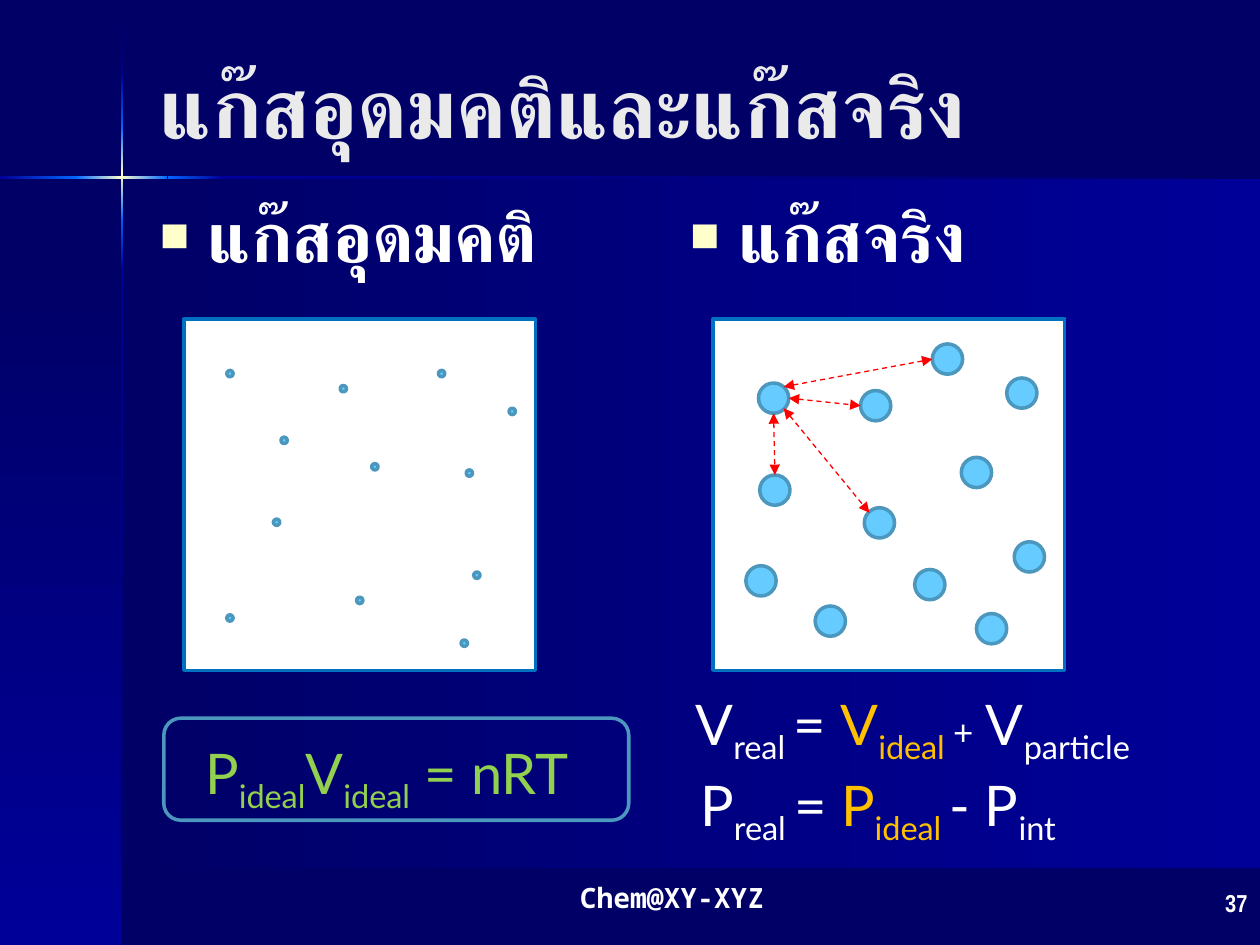
from lxml import etree
from pptx import Presentation
from pptx.dml.color import RGBColor
from pptx.enum.dml import MSO_LINE
from pptx.enum.shapes import MSO_CONNECTOR as LINK, MSO_SHAPE as SHAPE
from pptx.enum.text import MSO_ANCHOR as ANCHOR, MSO_AUTO_SIZE as FIT, PP_ALIGN as ALIGN
from pptx.oxml.ns import qn
from pptx.util import Inches, Pt

NIGHT, NAVY, BLUE, CREAM = "000066", "000099", "0066FF", "FFFFCC"
WHITE, GOLD, GREEN, RED = "FFFFFF", "FFC000", "92D050", "FF0000"
SKY, TEAL, FRAME, PALE = "66CCFF", "4B97BD", "0070C0", "EAEAEA"
DOWN, ACROSS = 90, 0


def rgb(code):
    return RGBColor.from_string(code)


def node(parent, tag, **attrs):
    return etree.SubElement(parent, qn(tag), **attrs)


class Board:
    """Holds the style and the current slide."""
    head, math = "Calibri", "Lato"

    def __init__(self, slide):
        self.slide = slide
        self.items = slide.shapes

    def shape(self, kind, x, y, w, h, fill=None, line=None):
        item = self.items.add_shape(kind, *map(Inches, (x, y, w, h)))
        item.shadow.inherit = False
        if fill:
            item.fill.solid()
            item.fill.fore_color.rgb = rgb(fill)
        else:
            item.fill.background()
        if line:
            item.line.color.rgb = rgb(line)
            item.line.width = Pt(2)
        else:
            item.line.fill.background()
        return item

    def band(self, x, y, w, h, angle, *codes):
        item = self.shape(SHAPE.RECTANGLE, x, y, w, h)
        item.fill.gradient()
        item.fill.gradient_angle = (360 - angle) % 360
        stops = item._element.spPr.find(".//" + qn("a:gsLst"))
        for old in list(stops):
            stops.remove(old)
        for i, code in enumerate(codes):
            stop = node(stops, "a:gs", pos=str(100000 * i // (len(codes) - 1)))
            node(stop, "a:srgbClr", val=code)

    def text(self, x, y, w, h, words, size, font, color=WHITE, bold=True,
             align=ALIGN.LEFT, anchor=ANCHOR.TOP):
        frame = self.items.add_textbox(*map(Inches, (x, y, w, h))).text_frame
        frame.word_wrap = True
        frame.vertical_anchor = anchor
        frame.text = words
        para = frame.paragraphs[0]
        para.alignment = align
        run = para.runs[0]
        self.style(run, size, font, color, bold)
        node(run._r.get_or_add_rPr(), "a:cs", typeface=font)
        return para

    def style(self, run, size, font, color, bold=False):
        run.font.size = Pt(size)
        run.font.name = font
        run.font.bold = bold
        run.font.color.rgb = rgb(color)

    def bullet(self, x, words):
        para = self.text(x, 1.48, 4.04, 1.2, words, 40, self.head)
        para.space_before = Pt(8)
        props = para._p.get_or_add_pPr()
        props.set("marL", str(Inches(0.38)))
        props.set("indent", str(-Inches(0.38)))
        node(node(props, "a:buClr"), "a:srgbClr", val=CREAM)
        node(props, "a:buSzPct", val="70000")
        node(props, "a:buFont", typeface="Arial")
        node(props, "a:buChar", char="■")

    def formula(self, x, y, w, *parts):
        """Each part is (words, colour, is subscript, size)."""
        frame = self.items.add_textbox(*map(Inches, (x, y, w, 0.64))).text_frame
        frame.word_wrap = True
        frame.auto_size = FIT.SHAPE_TO_FIT_TEXT
        for words, color, low, size in parts:
            run = frame.paragraphs[0].add_run()
            run.text = words
            self.style(run, size, self.math, color)
            if low:
                run._r.get_or_add_rPr().set("baseline", "-25000")

    def balls(self, size, spots):
        for x, y in spots:
            self.shape(SHAPE.OVAL, x, y, size, size, SKY, TEAL)

    def arrow(self, *ends):
        link = self.items.add_connector(LINK.STRAIGHT, *map(Inches, ends))
        link.line.color.rgb = rgb(RED)
        link.line.width = Pt(0.75)
        link.line.dash_style = MSO_LINE.DASH
        line = link.line._get_or_add_ln()
        node(line, "a:headEnd", type="triangle")
        node(line, "a:tailEnd", type="triangle")
        node(link._element.spPr, "a:effectLst")


def main():
    deck = Presentation()
    deck.slide_width, deck.slide_height = Inches(10), Inches(7.5)
    slide = deck.slides.add_slide(deck.slide_layouts[6])
    slide.background.fill.solid()
    slide.background.fill.fore_color.rgb = rgb(NIGHT)
    board = Board(slide)

    # Backdrop panels
    board.band(0.97, 1.41, 9.03, 5.48, ACROSS, NIGHT, NAVY)
    board.band(0, 2.02, 0.97, 5.48, DOWN, NIGHT, NAVY)

    # Glowing cross: upright beam, then level beam
    for y, h, *codes in [(2.14, 4.68, NAVY, NIGHT), (0.01, 1, NIGHT, NAVY),
                         (1.71, 0.44, BLUE, NAVY), (0.59, 0.44, NAVY, BLUE),
                         (1.01, 0.73, BLUE, CREAM, BLUE)]:
        board.band(0.96, y, 0.02, h, DOWN, *codes)
    for x, w, *codes in [(1.77, 8.23, NAVY, NIGHT), (0, 0.61, NAVY, BLUE),
                         (1.33, 0.44, BLUE, NAVY),
                         (0.6, 0.73, BLUE, CREAM, BLUE)]:
        board.band(x, 1.4, w, 0.02, ACROSS, *codes)

    # Title, headings and footer
    board.text(1.17, 0.33, 8.25, 1, "แก๊สอุดมคติและแก๊สจริง", 48, board.head,
               PALE, anchor=ANCHOR.MIDDLE)
    board.bullet(1.17, "แก๊สอุดมคติ")
    board.bullet(5.38, "แก๊สจริง")
    board.text(3.75, 6.94, 3.17, 0.39, "Chem@XY-XYZ", 16, "Noto Sans Mono",
               align=ALIGN.CENTER)
    board.text(7.92, 7, 2.08, 0.5, "37", 14, "Arial Narrow", align=ALIGN.RIGHT)

    # Gas boxes
    for x in (1.46, 5.66):
        board.shape(SHAPE.RECTANGLE, x, 2.53, 2.79, 2.79, WHITE, FRAME)

    # Ideal gas: tiny particles
    board.balls(0.05, [(2.7, 3.06), (2.23, 3.47), (1.8, 4.88), (3.7, 3.73),
                       (3.48, 2.94), (1.8, 2.94), (2.83, 4.74), (3.76, 4.54),
                       (2.95, 3.68), (2.17, 4.12), (3.66, 5.08), (4.04, 3.24)])

    # Real gas: large particles that attract each other
    board.balls(0.24, [(7.63, 3.63), (7.4, 2.73), (6.02, 3.04), (7.26, 4.52),
                       (8.05, 4.3), (7.99, 3), (6.03, 3.77), (6.47, 4.81),
                       (6.86, 4.03), (6.83, 3.1), (5.92, 4.49), (7.75, 4.87)])
    for ends in [(6.26, 3.16, 6.83, 3.22), (6.14, 3.28, 6.15, 3.77),
                 (6.22, 3.24, 6.9, 4.07), (6.22, 3.07, 7.4, 2.85)]:
        board.arrow(*ends)

    # Formulas
    def term(sign, low, color):
        return (sign, color, False, 32), (low, color, True, 32)

    equal = ("= ", WHITE, False, 32)
    board.formula(5.42, 5.42, 4.11, *term("V", "real ", WHITE), equal,
                  *term("V", "ideal ", GOLD), ("+", WHITE, False, 20),
                  *term(" V", "particle", WHITE))
    board.formula(5.46, 6.07, 4.07, *term("P", "real ", WHITE), equal,
                  *term("P", "ideal ", GOLD), *term("- P", "int", WHITE))
    board.formula(1.53, 5.81, 3.46, *term("P", "ideal", GREEN),
                  *term("V", "ideal", GREEN), (" = nRT", GREEN, False, 32))
    board.shape(SHAPE.ROUNDED_RECTANGLE, 1.3, 5.7, 3.69, 0.81, line=TEAL)

    deck.save("out.pptx")


if __name__ == "__main__":
    main()
